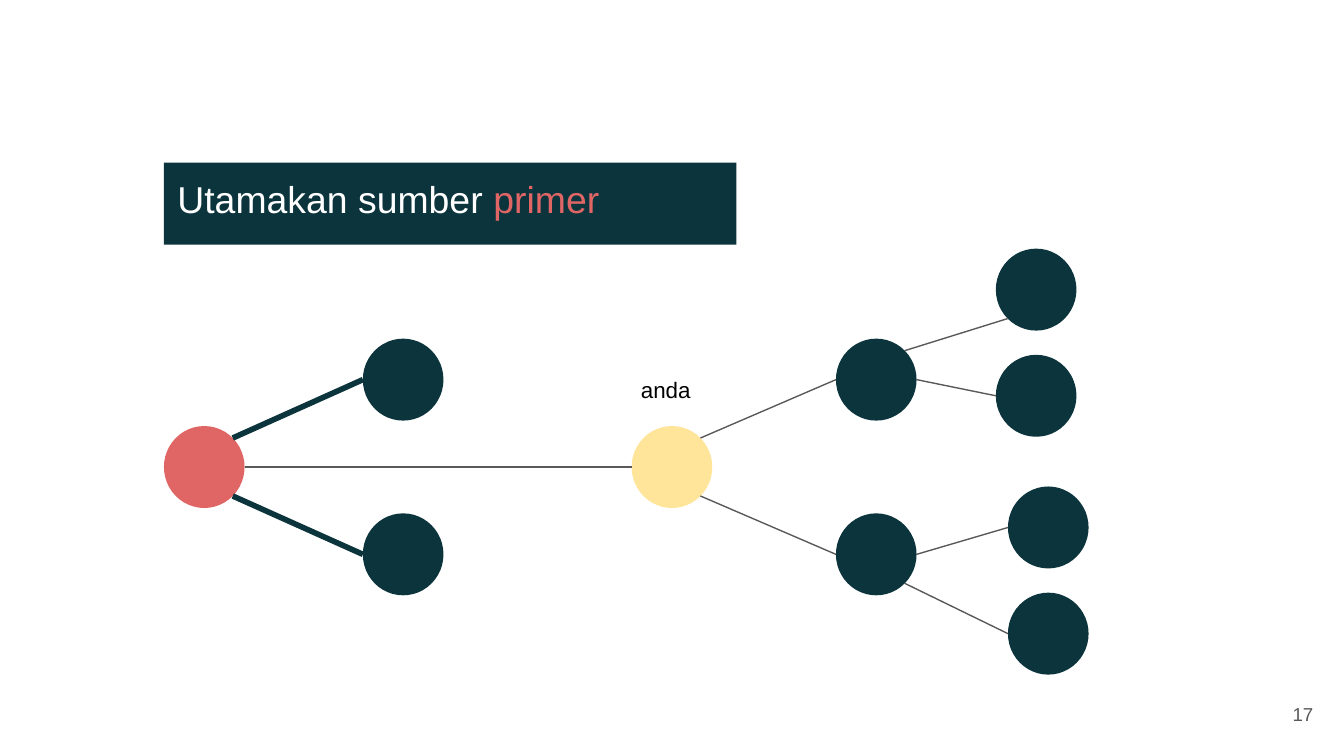
"""Build a slide showing primary sources and the reader as a linked network."""
from math import sqrt

from pptx import Presentation
from pptx.dml.color import RGBColor
from pptx.enum.shapes import MSO_CONNECTOR, MSO_SHAPE
from pptx.enum.text import MSO_ANCHOR, MSO_AUTO_SIZE, PP_ALIGN
from pptx.oxml.ns import qn
from pptx.util import Inches, Pt
from lxml.etree import SubElement

NAVY = RGBColor(0x0C, 0x34, 0x3D)
CORAL = RGBColor(0xE0, 0x66, 0x66)
YELLOW = RGBColor(0xFF, 0xE5, 0x99)
GREY = RGBColor(0x59, 0x59, 0x59)
WHITE = RGBColor(0xFF, 0xFF, 0xFF)
BLACK = RGBColor(0, 0, 0)

FONT = "Arial"
SLIDE_WIDTH = 10
SLIDE_HEIGHT = SLIDE_WIDTH * 9 / 16
NODE_WIDTH, NODE_HEIGHT = 0.6, 0.61
TITLE_RUNS = [("Utamakan sumber ", WHITE), ("primer", CORAL)]

NODES = {
    "primary": (1.22, 3.17, CORAL),
    "upper source": (2.7, 2.52, NAVY),
    "lower source": (2.7, 3.82, NAVY),
    "you": (4.7, 3.17, YELLOW),
    "upper reader": (6.22, 2.52, NAVY),
    "lower reader": (6.22, 3.82, NAVY),
    "upper leaf 1": (7.41, 1.85, NAVY),
    "upper leaf 2": (7.41, 2.64, NAVY),
    "lower leaf 1": (7.5, 3.62, NAVY),
    "lower leaf 2": (7.5, 4.41, NAVY),
}

DIAGONAL = 1 / sqrt(2)
SITES = {
    "left": (-1, 0),
    "right": (1, 0),
    "upper right": (DIAGONAL, -DIAGONAL),
    "lower right": (DIAGONAL, DIAGONAL),
    "lower left": (-DIAGONAL, DIAGONAL),
}

LINKS = [
    ("primary", "upper right", "upper source", "left", NAVY, 3),
    ("primary", "lower right", "lower source", "left", NAVY, 3),
    ("primary", "right", "you", "left", GREY, 0.75),
    ("you", "upper right", "upper reader", "left", GREY, 0.75),
    ("you", "lower right", "lower reader", "left", GREY, 0.75),
    ("upper reader", "upper right", "upper leaf 1", "lower left", GREY, 0.75),
    ("upper reader", "right", "upper leaf 2", "left", GREY, 0.75),
    ("lower reader", "right", "lower leaf 1", "left", GREY, 0.75),
    ("lower reader", "lower right", "lower leaf 2", "left", GREY, 0.75),
]

LABELS = [
    ("17", (9.27, 5.1, 0.6, 0.43), 10, GREY, PP_ALIGN.RIGHT, MSO_ANCHOR.MIDDLE),
    ("anda", (4.67, 2.7, 0.66, 0.43), 12, BLACK, PP_ALIGN.LEFT, MSO_ANCHOR.TOP),
]


def set_frame(frame, anchor):
    frame.word_wrap = True
    frame.auto_size = MSO_AUTO_SIZE.NONE
    frame.vertical_anchor = anchor
    frame.margin_left = frame.margin_right = Inches(0.1)
    frame.margin_top = frame.margin_bottom = Inches(0.1)


def add_title(slide):
    title = slide.shapes.title
    title.left, title.top = Inches(1.22), Inches(1.21)
    title.width, title.height = Inches(4.26), Inches(0.61)
    title.fill.solid()
    title.fill.fore_color.rgb = NAVY
    set_frame(title.text_frame, MSO_ANCHOR.TOP)
    heading = title.text_frame.paragraphs[0]
    heading.alignment = PP_ALIGN.LEFT
    heading.font.name, heading.font.size = FONT, Pt(20)
    for words, color in TITLE_RUNS:
        run = heading.add_run()
        run.text = words
        run.font.color.rgb = color


def add_label(slide, words, box, size, color, alignment, anchor):
    label = slide.shapes.add_textbox(*map(Inches, box))
    set_frame(label.text_frame, anchor)
    paragraph = label.text_frame.paragraphs[0]
    paragraph.text = words
    paragraph.alignment = alignment
    paragraph.font.name, paragraph.font.size = FONT, Pt(size)
    paragraph.font.color.rgb = color


def add_node(slide, left, top, color):
    node = slide.shapes.add_shape(
        MSO_SHAPE.OVAL, *map(Inches, (left, top, NODE_WIDTH, NODE_HEIGHT)))
    node.fill.solid()
    node.fill.fore_color.rgb = color
    node.line.fill.background()
    node.shadow.inherit = False


def site_point(node, site):
    left, top, _ = NODES[node]
    across, down = SITES[site]
    return (Inches(left + NODE_WIDTH / 2 * (1 + across)),
            Inches(top + NODE_HEIGHT / 2 * (1 + down)))


def add_link(slide, source, source_site, target, target_site, color, weight):
    link = slide.shapes.add_connector(
        MSO_CONNECTOR.STRAIGHT,
        *site_point(source, source_site), *site_point(target, target_site))
    link.line.color.rgb = color
    link.line.width = Pt(weight)
    SubElement(link._element.spPr, qn("a:effectLst"))


def main():
    deck = Presentation()
    deck.slide_width, deck.slide_height = Inches(SLIDE_WIDTH), Inches(SLIDE_HEIGHT)
    slide = deck.slides.add_slide(deck.slide_layouts[5])
    add_title(slide)
    for node in NODES.values():
        add_node(slide, *node)
    for link in LINKS:
        add_link(slide, *link)
    for label in LABELS:
        add_label(slide, *label)
    deck.save("out.pptx")


if __name__ == "__main__":
    main()
